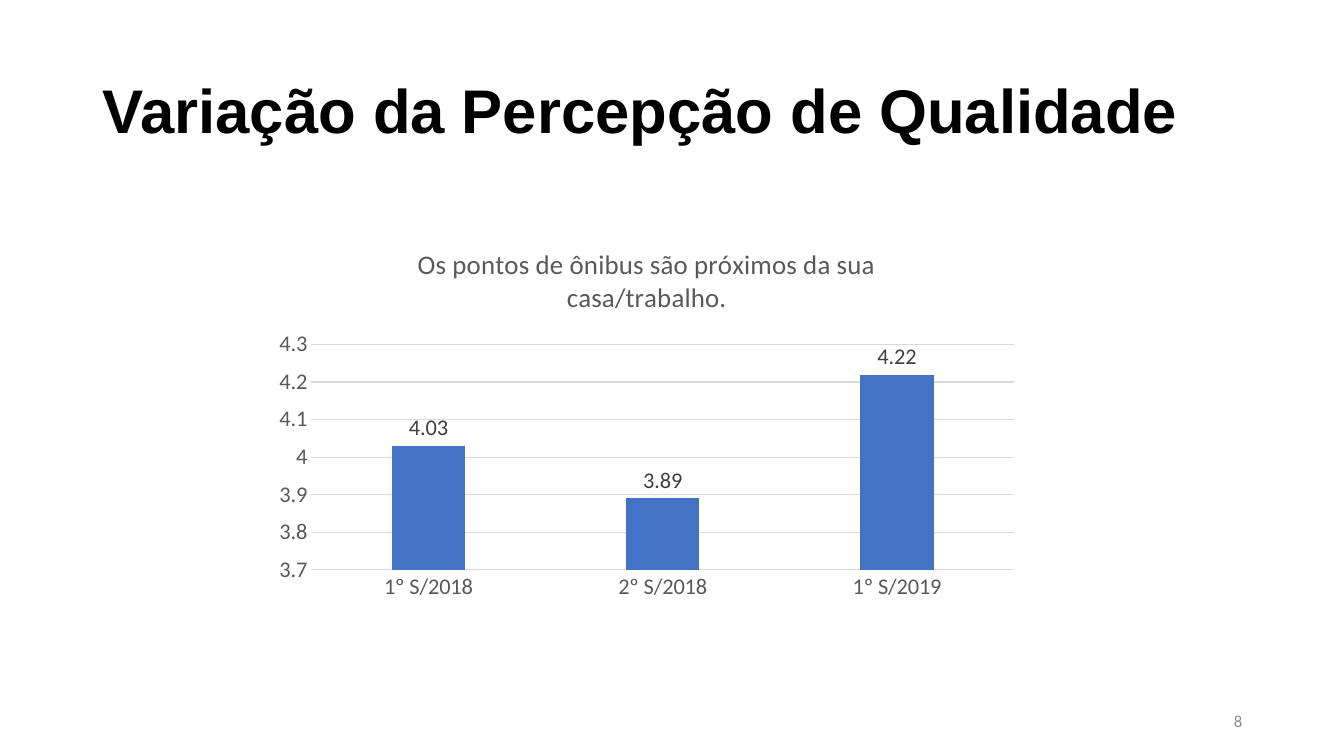
from pptx import Presentation
from pptx.chart.data import CategoryChartData
from pptx.dml.color import RGBColor
from pptx.enum.chart import XL_CHART_TYPE, XL_LABEL_POSITION, XL_TICK_MARK
from pptx.enum.text import MSO_ANCHOR, PP_ALIGN
from pptx.util import Inches, Pt

WIDTH, HEIGHT = 13.33, 7.5
MARGIN = 0.92
CONTENT = 11.5

HEADING = "Variação da Percepção de Qualidade"
PAGE_NUMBER = "8"
QUESTION = "Os pontos de ônibus são próximos da sua casa/trabalho."
SCORES = {"1º S/2018": 4.03, "2º S/2018": 3.89, "1º S/2019": 4.22}
SCALE = (3.7, 4.3, 0.1)

BLACK, GREY, DARK, PALE = "000000", "595959", "404040", "D9D9D9"
BAR, NUMBER_GREY = "4472C4", "8C8C8C"


def color(value):
    return RGBColor.from_string(value)


def style_font(font, size, shade, name="Calibri", bold=False):
    font.size, font.name, font.bold = Pt(size), name, bold
    font.color.rgb = color(shade)


def style_line(line, shade=PALE, width=0.75):
    line.color.rgb = color(shade)
    line.width = Pt(width)


def add_text(page, text, left, top, width, height, *, align=PP_ALIGN.LEFT,
             spacing=1.0, **font):
    box = page.shapes.add_textbox(*map(Inches, (left, top, width, height)))
    frame = box.text_frame
    frame.word_wrap = True
    frame.vertical_anchor = MSO_ANCHOR.MIDDLE
    para = frame.paragraphs[0]
    para.alignment, para.line_spacing = align, spacing
    span = para.add_run()
    span.text = text
    style_font(span.font, **font)


def add_score_chart(page, left, top, width, height):
    data = CategoryChartData()
    data.categories = list(SCORES)
    data.add_series(QUESTION, list(SCORES.values()))
    chart = page.shapes.add_chart(XL_CHART_TYPE.COLUMN_CLUSTERED,
                                  *map(Inches, (left, top, width, height)), data).chart
    style_font(chart.font, 16, BLACK)
    chart.has_legend = False

    chart.has_title = True
    title = chart.chart_title
    title.include_in_layout = False
    para = title.text_frame.paragraphs[0]
    span = para.add_run()
    span.text = QUESTION
    for font in (para.font, span.font):
        style_font(font, 19.2, GREY)

    for axis in (chart.category_axis, chart.value_axis):
        axis.major_tick_mark = axis.minor_tick_mark = XL_TICK_MARK.NONE
        style_font(axis.tick_labels.font, 16, GREY)
    style_line(chart.category_axis.format.line)
    values = chart.value_axis
    values.minimum_scale, values.maximum_scale, values.major_unit = SCALE
    values.format.line.fill.background()
    style_line(values.major_gridlines.format.line)

    plot = chart.plots[0]
    plot.gap_width, plot.overlap, plot.vary_by_categories = 219, -27, False
    series = plot.series[0]
    series.format.fill.solid()
    series.format.fill.fore_color.rgb = color(BAR)
    labels = series.data_labels
    labels.show_value = True
    labels.position = XL_LABEL_POSITION.OUTSIDE_END
    style_font(labels.font, 16, DARK)


def main():
    deck = Presentation()
    deck.slide_width, deck.slide_height = Inches(WIDTH), Inches(HEIGHT)
    page = deck.slides.add_slide(deck.slide_layouts[6])
    add_text(page, HEADING, MARGIN, 0.4, CONTENT, 1.45, spacing=0.9,
             size=44, shade=BLACK, name="Arial", bold=True)
    number_width = 3
    add_text(page, PAGE_NUMBER, MARGIN + CONTENT - number_width, 6.95, number_width, 0.4,
             align=PP_ALIGN.RIGHT, size=12, shade=NUMBER_GREY)
    add_score_chart(page, 2.62, 2.25, 7.59, 3.79)
    deck.save("out.pptx")


if __name__ == "__main__":
    main()
